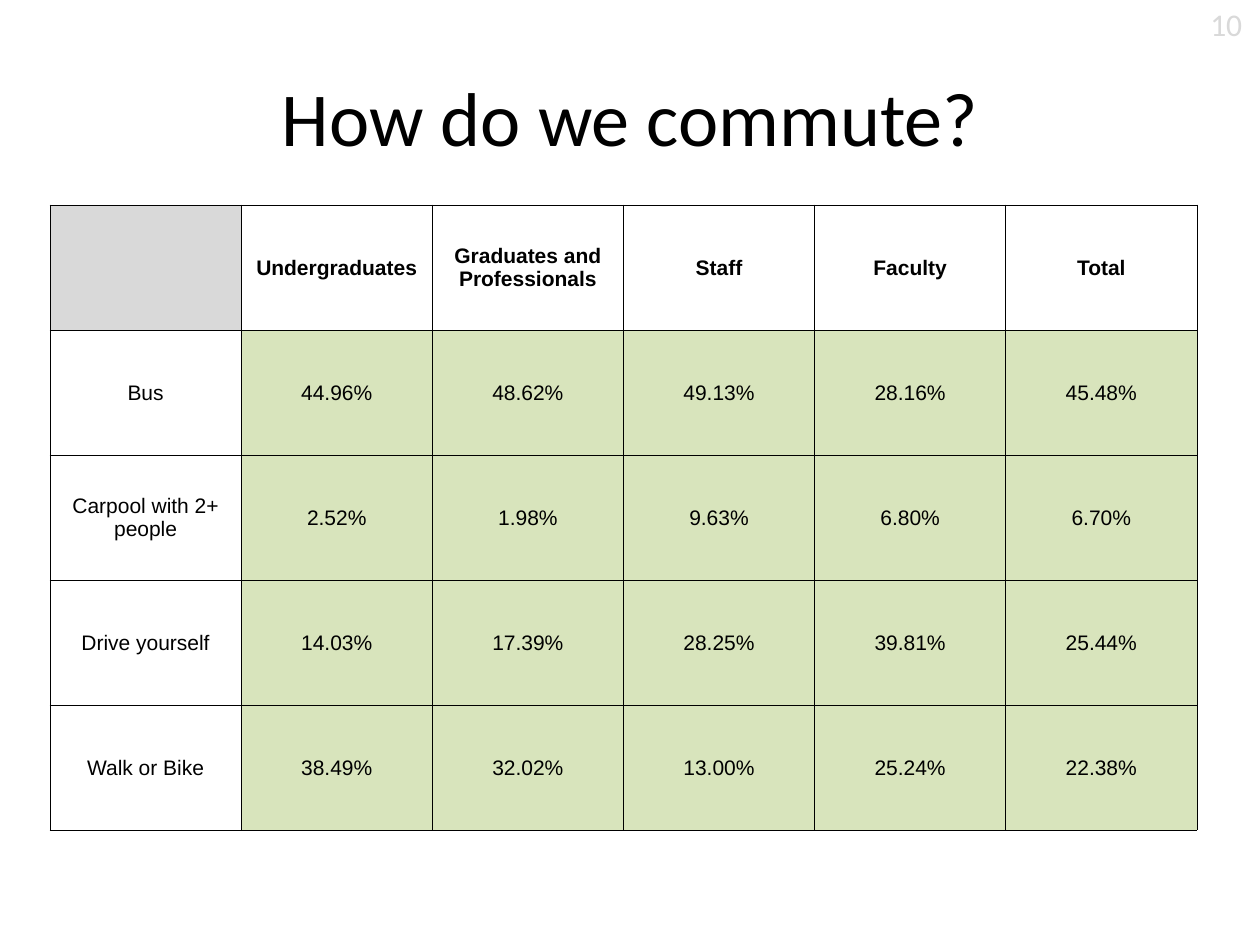
from lxml.etree import SubElement
from pptx import Presentation
from pptx.dml.color import RGBColor
from pptx.enum.text import MSO_ANCHOR, MSO_AUTO_SIZE, PP_ALIGN
from pptx.oxml.ns import qn
from pptx.util import Pt

PX = 9666  # EMU per px
BLACK = RGBColor(0x00, 0x00, 0x00)
WHITE = RGBColor(0xFF, 0xFF, 0xFF)
GREY = RGBColor(0xD9, 0xD9, 0xD9)
GREEN = RGBColor(0xD8, 0xE4, 0xBC)

PAGE_SIZE = (1260, 945)
TITLE_BOX = (63, 38, 1134, 157)
TABLE_BOX = (50, 205, 1147, 625)
NUMBER_BOX = (1201, 0, 63, 47)

TITLE_FONT = {"name": "Calibri", "size": Pt(58)}
NUMBER_FONT = {"name": "Calibri", "size": Pt(24)}
CELL_FONT = {"name": "Arial", "size": Pt(16)}
TITLE_FRAME = {"word_wrap": True, "auto_size": MSO_AUTO_SIZE.NONE,
               "vertical_anchor": MSO_ANCHOR.MIDDLE,
               "margin_left": 12 * PX, "margin_right": 12 * PX,
               "margin_top": 7 * PX, "margin_bottom": 7 * PX}
NUMBER_FRAME = {"word_wrap": True, "auto_size": MSO_AUTO_SIZE.SHAPE_TO_FIT_TEXT}
CELL_FORMAT = {"vertical_anchor": MSO_ANCHOR.MIDDLE, "margin_left": PX,
               "margin_right": PX, "margin_top": PX, "margin_bottom": 0}

COMMUTE = [
    ["", "Undergraduates", "Graduates and Professionals", "Staff", "Faculty", "Total"],
    ["Bus", "44.96%", "48.62%", "49.13%", "28.16%", "45.48%"],
    ["Carpool with 2+ people", "2.52%", "1.98%", "9.63%", "6.80%", "6.70%"],
    ["Drive yourself", "14.03%", "17.39%", "28.25%", "39.81%", "25.44%"],
    ["Walk or Bike", "38.49%", "32.02%", "13.00%", "25.24%", "22.38%"],
]


def to_emu(box):
    return [length * PX for length in box]


def set_all(target, values):
    for name, value in values.items():
        setattr(target, name, value)


def write(frame, text, font, color, align, bold=False):
    frame.text = text
    para = frame.paragraphs[0]
    para.alignment = align
    set_all(para.font, {**font, "bold": bold})
    para.font.color.rgb = color


def add_borders(cell):
    properties = cell._tc.get_or_add_tcPr()
    for position, side in enumerate(("lnL", "lnR", "lnT", "lnB")):
        line = SubElement(properties, qn(f"a:{side}"), w=str(Pt(0.5)))
        fill = SubElement(line, qn("a:solidFill"))
        SubElement(fill, qn("a:srgbClr"), val=str(BLACK))
        properties.insert(position, line)


def cell_color(row, column):
    if row == 0:
        return WHITE if column else GREY
    return GREEN if column else None


# Title
def place_title(page, box):
    title = page.shapes.title
    title.left, title.top, title.width, title.height = to_emu(box)
    set_all(title.text_frame, TITLE_FRAME)
    write(title.text_frame, "How do we commute?", TITLE_FONT, BLACK, PP_ALIGN.CENTER)


# Table of commuting shares
def place_table(page, box):
    rows, columns = len(COMMUTE), len(COMMUTE[0])
    table = page.shapes.add_table(rows, columns, *to_emu(box)).table
    set_all(table, {"first_row": False, "horz_banding": False})
    for row, texts in enumerate(COMMUTE):
        for column, text in enumerate(texts):
            cell = table.cell(row, column)
            set_all(cell, CELL_FORMAT)
            write(cell.text_frame, text, CELL_FONT, BLACK, PP_ALIGN.CENTER, row == 0)
            color = cell_color(row, column)
            if color is None:
                cell.fill.background()
            else:
                cell.fill.solid()
                cell.fill.fore_color.rgb = color
            add_borders(cell)


# Page number
def place_number(page, box):
    frame = page.shapes.add_textbox(*to_emu(box)).text_frame
    set_all(frame, NUMBER_FRAME)
    write(frame, "10", NUMBER_FONT, GREY, PP_ALIGN.LEFT)


def main():
    deck = Presentation()
    deck.slide_width, deck.slide_height = to_emu(PAGE_SIZE)
    page = deck.slides.add_slide(deck.slide_layouts.get_by_name("Title Only"))
    place_title(page, TITLE_BOX)
    place_table(page, TABLE_BOX)
    place_number(page, NUMBER_BOX)
    deck.save("out.pptx")


if __name__ == "__main__":
    main()
